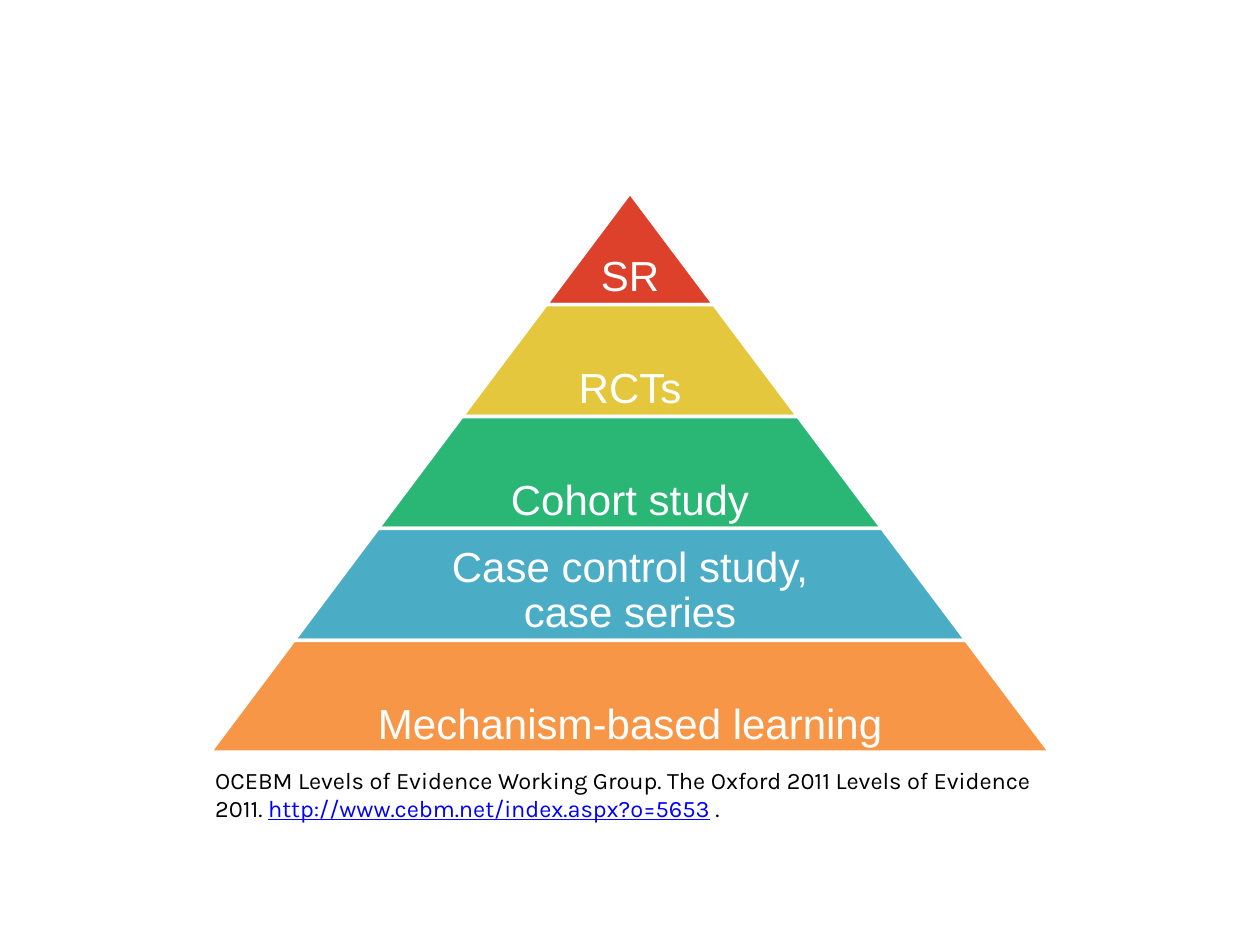
from dataclasses import dataclass

from pptx import Presentation
from pptx.dml.color import RGBColor as RGB
from pptx.enum.shapes import MSO_SHAPE as SHAPE
from pptx.enum.text import MSO_ANCHOR as ANCHOR, PP_ALIGN as ALIGN
from pptx.util import Inches, Pt


@dataclass(frozen=True)
class Theme:
    white: str = "FFFFFF"
    ink: str = "000000"
    link: str = "0000FF"
    tier_font: str = "Arial"
    tier_size: float = 24
    source_font: str = "Karla"
    source_size: float = 13.5
    edge: float = 2


class Deck:
    """Holds the theme and the current slide; lengths are in inches."""

    def __init__(self, prs, theme):
        self.theme = theme
        self.slide = prs.slides.add_slide(prs.slide_layouts[6])

    def run(self, p, text, font, size, color, underline=None):
        r = p.add_run()
        r.text = text
        r.font.name, r.font.size = font, Pt(size)
        r.font.color.rgb = RGB.from_string(color)
        r.font.underline = underline

    def text_box(self, shapes, x, y, w, h):
        sp = shapes.add_textbox(Inches(x), Inches(y), Inches(w), Inches(h))
        sp.text_frame.word_wrap = True
        return sp.text_frame

    def trapezoid(self, shapes, x, y, w, h, fill, slant):
        sp = shapes.add_shape(SHAPE.TRAPEZOID, Inches(x), Inches(y), Inches(w), Inches(h))
        sp.adjustments[0] = slant
        sp.shadow.inherit = False
        sp.fill.solid()
        sp.fill.fore_color.rgb = RGB.from_string(fill)
        sp.line.color.rgb = RGB.from_string(self.theme.white)
        sp.line.width = Pt(self.theme.edge)

    def tier_label(self, shapes, x, y, w, h, text):
        t = self.theme
        tf = self.text_box(shapes, x, y, w, h)
        tf.vertical_anchor = ANCHOR.BOTTOM
        tf.margin_left = tf.margin_right = tf.margin_top = tf.margin_bottom = Inches(0.03)
        p = tf.paragraphs[0]
        p.alignment, p.line_spacing = ALIGN.CENTER, 0.9
        self.run(p, text, t.tier_font, t.tier_size, t.white)

    def pyramid(self, center, top, width, height, tiers):
        """Equal rows, each wider than the one above by the same step."""
        shapes = self.slide.shapes.add_group_shape().shapes
        row, step = height / len(tiers), width / len(tiers)
        for i, (text, fill) in enumerate(tiers):
            y, w = top + i * row, (i + 1) * step
            self.trapezoid(shapes, center - w / 2, y, w, row, fill, step / 2 / row)
            label_w = w * 0.65 if i else w
            self.tier_label(shapes, center - label_w / 2, y, label_w, row, text)

    def source(self, x, y, w, h, lines):
        t = self.theme
        tf = self.text_box(self.slide.shapes, x, y, w, h)
        for i, line in enumerate(lines):
            p = tf.add_paragraph() if i else tf.paragraphs[0]
            for text, is_link in line:
                color = t.link if is_link else t.ink
                self.run(p, text, t.source_font, t.source_size, color, is_link)


TIERS = [
    ("SR", "DD412C"),
    ("RCTs", "E4C73D"),
    ("Cohort study", "2AB675"),
    ("Case control study, case series", "4BACC6"),
    ("Mechanism-based learning", "F79646"),
]

SOURCE = [
    [("OCEBM Levels of Evidence Working Group. The Oxford 2011 Levels of Evidence", False)],
    [("2011. ", False), ("http://www.cebm.net/index.aspx?o=5653", True), (" .", False)],
]


def main():
    width, height = 10, 7.5
    prs = Presentation()
    prs.slide_width, prs.slide_height = Inches(width), Inches(height)
    deck = Deck(prs, Theme())

    # Evidence pyramid, two thirds of the slide wide
    deck.pyramid(width / 2, 1.53, width * 2 / 3, 4.44, TIERS)

    # Citation under the pyramid
    deck.source(1.61, 6.03, 7.02, 0.56, SOURCE)

    prs.save("out.pptx")


if __name__ == "__main__":
    main()
